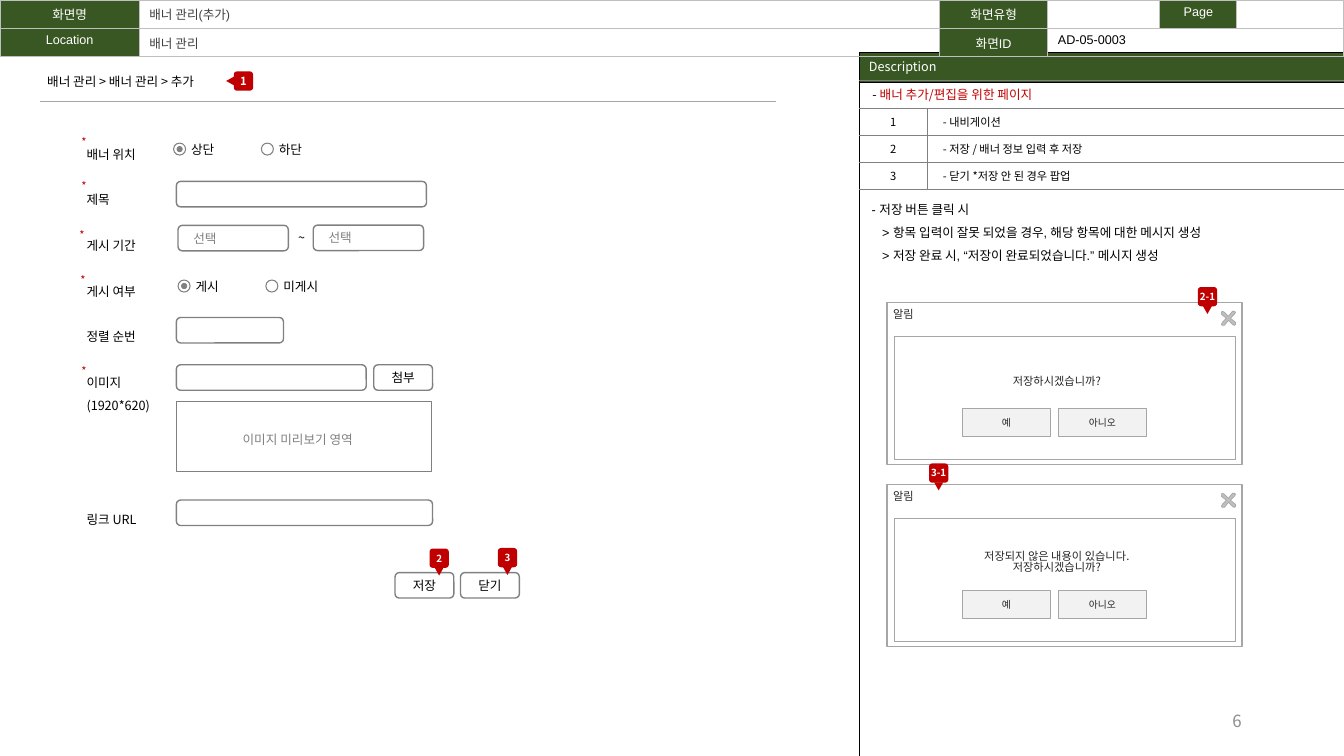
from lxml import etree
from pptx import Presentation
from pptx.dml.color import RGBColor
from pptx.enum import shapes, text
from pptx.oxml import ns
from pptx.util import Pt

NOTO = "Noto Sans CJK KR"
GREEN, RED, GREY, EDGE = "385723", "C00000", "808080", "A6A6A6"
BLACK, WHITE, DARK, INK = "000000", "FFFFFF", "404040", "262626"
KIND = shapes.MSO_SHAPE
LEFT, MID, RIGHT = text.PP_ALIGN.LEFT, text.PP_ALIGN.CENTER, text.PP_ALIGN.RIGHT
TOP, HALF = text.MSO_ANCHOR.TOP, text.MSO_ANCHOR.MIDDLE
rgb = RGBColor.from_string

deck = Presentation()
deck.slide_width, deck.slide_height = Pt(960), Pt(540)
slide = deck.slides.add_slide(deck.slide_layouts[6])
draw = slide.shapes


def write(frame, words, size=9, color=BLACK, font=NOTO, align=LEFT, bold=False, lead="", space=None):
    for i, line in enumerate(words.split("\n")):
        para = frame.add_paragraph() if i else frame.paragraphs[0]
        para.alignment = align
        para.line_spacing = space
        for part, tone in ((lead, BLACK), (line, color)):
            if part:
                run = para.add_run()
                run.text = part
                run.font.size, run.font.name, run.font.bold = Pt(size), font, bold
                run.font.color.rgb = rgb(tone)
                east = etree.SubElement(run.font._element, ns.qn("a:ea"))
                east.set("typeface", NOTO)
        if not line:
            para._p.get_or_add_endParaRPr().set("sz", str(size * 100))
    return frame


def box(kind, x, y, w, h, fill=None, line=None, weight=1, pad=(7.2, 3.6), anchor=HALF, wrap=True):
    if kind:
        item = draw.add_shape(kind, Pt(x), Pt(y), Pt(w), Pt(h))
        item.shadow.inherit = False
        for paint, tone in ((item.fill, fill), (item.line.fill, line)):
            if tone:
                paint.solid()
                paint.fore_color.rgb = rgb(tone)
            else:
                paint.background()
        if line:
            item.line.width = Pt(weight)
    else:
        item = draw.add_textbox(Pt(x), Pt(y), Pt(w), Pt(h))
    frame = item.text_frame
    frame.word_wrap, frame.vertical_anchor = wrap, anchor
    frame.margin_left = frame.margin_right = Pt(pad[0])
    frame.margin_top = frame.margin_bottom = Pt(pad[1])
    return item


blank = ("", BLACK, None, LEFT)
notes = ["내비게이션", "저장 / 배너 정보 입력 후 저장", "닫기 *저장 안 된 경우 팝업"]
tables = [
    (613.5, 37.4, [346.5], [21.6, 481], BLACK, 0.5, "LRTB", 9, NOTO, TOP, None,
     [[("Description", WHITE, GREEN, LEFT)], [blank]]),
    (613.5, 57.2, [49, 297.5], [19.3] * 4, GREY, 0.75, "RTB", 8, NOTO, HALF, (0, 0, 0, 1),
     [[("배너 추가/편집을 위한 페이지", RED, None, LEFT), blank]]
     + [[(str(n), BLACK, None, MID), ("- " + note, BLACK, None, LEFT)] for n, note in enumerate(notes, 1)]),
    (0, 0, [99.5, 571.5, 77.5, 80, 55, 76.5], [20, 20], "BFBFBF", 1, "LRTB", 9, "Arial", TOP, (1, 3, 1, 5),
     [[("화면명", WHITE, GREEN, MID), ("배너 관리(추가)", DARK, None, LEFT), ("화면유형", WHITE, GREEN, MID),
       blank, ("Page", WHITE, GREEN, MID), blank],
      [("Location", WHITE, GREEN, MID), ("배너 관리", DARK, None, LEFT), ("화면ID", WHITE, GREEN, MID),
       ("AD-05-0003", BLACK, None, LEFT), blank, blank]]),
]
for x, y, cols, rows, tone, weight, sides, size, font, anchor, span, grid in tables:
    table = draw.add_table(len(rows), len(cols), Pt(x), Pt(y), Pt(sum(cols)), Pt(sum(rows))).table
    table.first_row = table.horz_banding = False
    for c, width in enumerate(cols):
        table.columns[c].width = Pt(width)
    for r, height in enumerate(rows):
        table.rows[r].height = Pt(height)
        for c, (words, color, fill, align) in enumerate(grid[r]):
            cell = table.cell(r, c)
            cell.vertical_anchor = anchor
            props = cell._tc.get_or_add_tcPr()
            for side in "LRTB":
                rule = etree.SubElement(props, ns.qn("a:ln" + side), w=str(int(Pt(weight))))
                if side in sides or (side == "L" and c):
                    solid = etree.SubElement(rule, ns.qn("a:solidFill"))
                    etree.SubElement(solid, ns.qn("a:srgbClr"), val=tone)
                else:
                    etree.SubElement(rule, ns.qn("a:noFill"))
            if fill:
                cell.fill.solid()
                cell.fill.fore_color.rgb = rgb(fill)
            else:
                cell.fill.background()
            top = tone == GREY and r == 0
            if tone == GREY and align == LEFT:
                cell.margin_left = Pt(9.7 if top else 11)
            write(cell.text_frame, words, 9 if top else size, color, font, align,
                  lead="- " if top and words else "")
    if span:
        table.cell(*span[:2]).merge(table.cell(*span[2:]))

write(box(None, 678, 500.4, 216, 28.8).text_frame, "6", 12, "8C8C8C", align=RIGHT)
write(box(None, 26.6, 49, 150.5, 18, anchor=TOP).text_frame, "배너 관리 > 배너 관리 > 추가")
rule = draw.add_connector(shapes.MSO_CONNECTOR.STRAIGHT, Pt(28.8), Pt(72.4), Pt(554), Pt(72.4))
rule.line.color.rgb, rule.line.width = rgb("A5A5A5"), Pt(0.5)
etree.SubElement(rule._element.spPr, ns.qn("a:effectLst"))

guide = write(box(None, 615.6, 135.4, 332, 54, anchor=TOP).text_frame,
              "- 저장 버튼 클릭 시\n> 항목 입력이 잘못 되었을 경우, 해당 항목에 대한 메시지 생성\n"
              "> 저장 완료 시, “저장이 완료되었습니다.” 메시지 생성", font="Arial", space=Pt(16.4))
for para in guide.paragraphs[1:]:
    para._p.get_or_add_pPr().set("marL", str(int(Pt(7.5))))

ask = "저장하시겠습니까?"
for y, words in ((216, ask), (346, "저장되지 않은 내용이 있습니다.\n" + ask)):
    box(KIND.RECTANGLE, 633.6, y, 253.6, 116, WHITE, EDGE)
    box(KIND.RECTANGLE, 638.8, y + 24.2, 244, 88, WHITE, EDGE, 0.75)
    for x, name in ((687.4, "예"), (756, "아니오")):
        key = box(KIND.RECTANGLE, x, y + 75.6, 62.8, 19.8, "F2F2F2", EDGE, 0.5, wrap=False)
        write(key.text_frame, name, 7, INK, align=MID)
    arms = []
    for turn in range(4):
        for px, py in ((-2, 0), (-7, -4), (-7, -6), (-6, -7), (-4, -6)):
            for _ in range(turn):
                px, py = -py, px
            arms.append((px, py))
    path = draw.build_freeform(*arms[0], scale=Pt(0.72))
    path.add_line_segments(arms[1:])
    cross = path.convert_to_shape(Pt(877.5), Pt(y + 11.4))
    cross.shadow.inherit = False
    cross.fill.solid()
    cross.fill.fore_color.rgb = rgb("BFBFBF")
    cross.line.color.rgb, cross.line.width = rgb(EDGE), Pt(0.5)
    write(box(None, 641.5, y + 36, 226.8, 39.6, pad=(4.3, 2.2)).text_frame, words, 8, INK,
          align=MID, space=0.8 if "\n" in words else None)
    write(box(None, 633.6, y + 1.4, 33.8, 15, pad=(4.3, 2.2), anchor=TOP).text_frame, "알림", 8, INK)

fields = [(126, 129.6, 178.6, ""), (126, 226.8, 76.5, ""), (126, 260.6, 135.6, ""), (126, 357.2, 183, ""),
          (127.2, 161, 78.8, "선택"), (223.8, 160.8, 78.8, "선택"),
          (267, 260.6, 42, "첨부"), (282.2, 409, 42, "저장"), (329, 409, 42, "닫기")]
for x, y, w, words in fields:
    field = box(KIND.ROUNDED_RECTANGLE, x, y, w, 18.2, WHITE, GREY)
    pick = words == "선택"
    if pick:
        field.text_frame.margin_left = Pt(10)
    if words:
        write(field.text_frame, words, color=GREY if pick else BLACK, align=LEFT if pick else MID)
view = box(KIND.RECTANGLE, 126, 286.6, 182.2, 50.2, WHITE, GREY, pad=(0, 0))
view.text_frame.margin_right, view.text_frame.margin_top = Pt(9), Pt(5)
write(view.text_frame, "이미지 미리보기 영역", color=GREY, align=MID)
write(box(None, 205.9, 160.6, 18.7, 18, anchor=TOP).text_frame, "~")

for x, y, names in ((124, 102.2, ("상단", "하단")), (127.2, 200, ("게시", "미게시"))):
    for i, name in enumerate(names):
        left = x + 62.7 * i
        box(KIND.OVAL, left, y, 8.6, 8.6, None, GREY, 0.75)
        if not i:
            box(KIND.OVAL, left + 2.5, y + 2.5, 3.6, 3.6, GREY, GREY, 0.75)
        write(box(None, left + 5.4, y - 4.6, 57, 18, anchor=TOP).text_frame, name)

for x, y in ((51.1, 92.9), (51.1, 124.6), (49.7, 159.8), (50.4, 191.5), (51.1, 257)):
    write(box(None, x, y, 15.2, 17.3, anchor=TOP).text_frame, "*", 8, RED, align=MID)
labels = write(box(None, 54.7, 95.8, 82.8, 283, anchor=TOP).text_frame,
               "배너 위치\n제목\n게시 기간\n게시 여부\n정렬 순번\n이미지\n(1920*620)\n링크 URL", space=Pt(16.3))
for para, lines in zip(labels.paragraphs, (0, 1, 1, 1, 1, 1, 0, 4)):
    para.space_before = Pt(16.3 * lines)

for x, y, name in ((167, 51, "1"), (306.8, 391.8, "2"), (355.6, 391.4, "3"), (855.6, 205, "2-1"), (663.6, 331, "3-1")):
    first = name == "1"
    tip = box(KIND.ISOSCELES_TRIANGLE, x - 5.8 if first else x + 3.6, y + (3.9 if first else 13.5), 6.5, 5.8, RED)
    tip.rotation = 270 if first else 180
    badge = box(KIND.ROUNDED_RECTANGLE, x, y, 13.8, 13.8, RED, pad=(0, 0), wrap=False)
    write(badge.text_frame, name, 8 if first else 7, WHITE, align=MID, bold=True)
    draw.add_group_shape([tip, badge])

deck.save("out.pptx")
